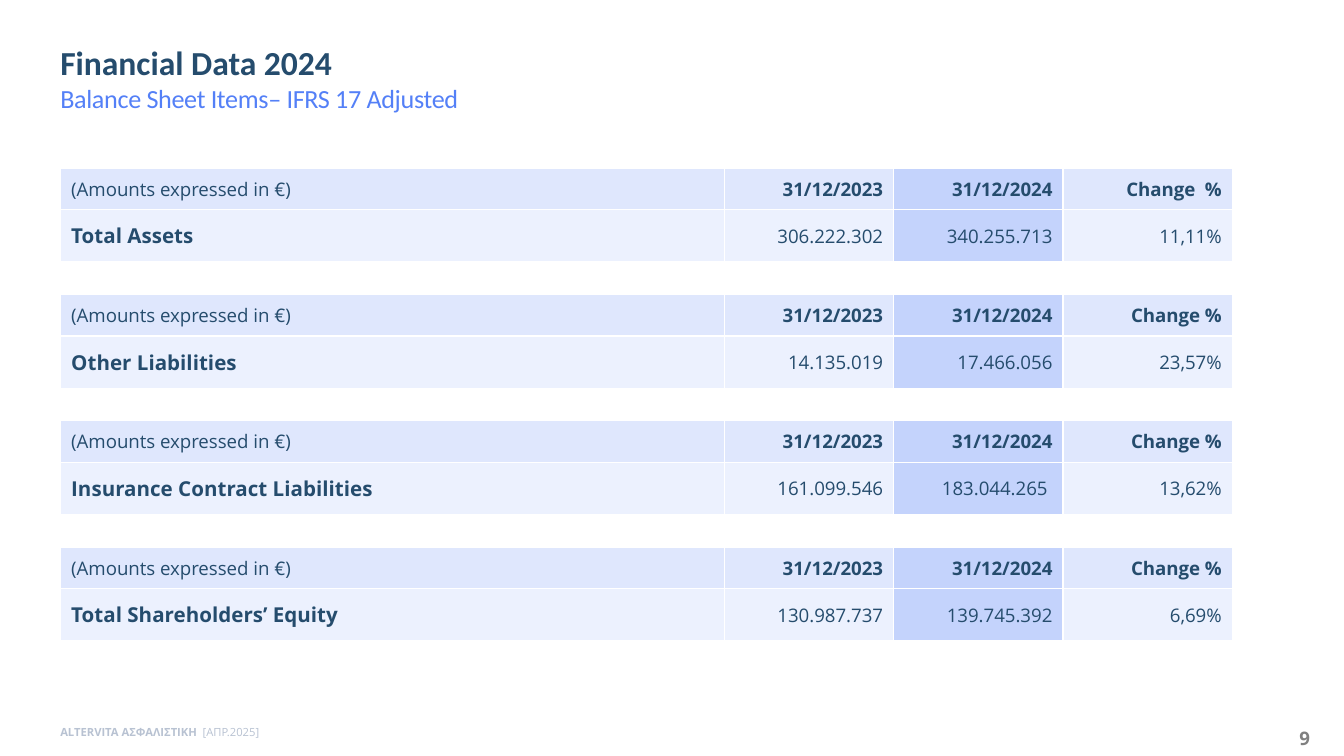
import pptx
import pptx.util
import pptx.dml.color
import pptx.enum.text
import pptx.oxml
import pptx.oxml.ns

Inches = pptx.util.Inches
Pt = pptx.util.Pt
ALIGN = pptx.enum.text.PP_ALIGN
COLORS = {
    "navy": "254C6D", "blue": "5480F7", "grey": "808080", "mist": "B8C2D2",
    "head": "DFE7FD", "body": "ECF1FE", "accent": "C4D3FC", "line": "FFFFFF",
}
COLS = [4.94, 1.26, 1.26, 1.26]
ROWS = [0.31, 0.39]
ITEMS = [
    ("Change  %", "Total Assets", "306.222.302", "340.255.713", "11,11%"),
    ("Change %", "Other Liabilities", "14.135.019", "17.466.056", "23,57%"),
    ("Change %", "Insurance Contract Liabilities", "161.099.546", "183.044.265 ", "13,62%"),
    ("Change %", "Total Shareholders’ Equity", "130.987.737", "139.745.392", "6,69%"),
]


def rgb(name):
    """Return the named colour."""
    return pptx.dml.color.RGBColor.from_string(COLORS[name])


def add_run(para, text, size, color, bold=False, font="Open Sans"):
    """Add a formatted run to a paragraph."""
    run = para.add_run()
    run.text = text
    for key, value in {"size": Pt(size), "bold": bold, "name": font}.items():
        setattr(run.font, key, value)
    run.font.color.rgb = rgb(color)
    return run


def add_text(slide, box, wrap=True, pad=0.05):
    """Add a text box and return its first paragraph."""
    frame = slide.shapes.add_textbox(*map(Inches, box)).text_frame
    form = {"word_wrap": wrap, "margin_top": Inches(pad), "margin_bottom": Inches(pad)}
    for key, value in form.items():
        setattr(frame, key, value)
    return frame.paragraphs[0]


def add_title(slide, box):
    """Place the title and its subtitle."""
    para = add_text(slide, box, pad=0.1)
    add_run(para, "Financial Data 2024", 18, "navy", True, "Calibri")
    para.add_line_break()
    run = add_run(para, "Balance Sheet Items– IFRS 17 Adjusted", 14, "blue", font="Calibri")
    run.font._element.set("spc", "-20")


def add_footer(slide, box):
    """Place the issuer line and the page number."""
    left, top, width, height = box
    para = add_text(slide, (left, top, 1.68, 0.2), wrap=False)
    add_run(para, "ALTERVITA ΑΣΦΑΛΙΣΤΙΚΗ  ", 6, "mist", True)
    add_run(para, "[ΑΠΡ.2025]", 6, "mist")
    para = add_text(slide, (left + width - 0.36, top + 0.01, 0.36, height))
    add_run(para, "9", 10, "grey", True)


def add_edges(cell, widths):
    """Draw the white borders of a cell."""
    props = cell._tc.get_or_add_tcPr()
    for side, width in widths.items():
        props.append(pptx.oxml.parse_xml(
            f'<a:ln{side} {pptx.oxml.ns.nsdecls("a")} w="{Pt(width)}"><a:solidFill>'
            f'<a:srgbClr val="{COLORS["line"]}"/></a:solidFill></a:ln{side}>'))


def fill_cell(cell, text, row, col):
    """Write and style one cell by its place in the table."""
    form = {
        "margin_left": Inches(0.08), "margin_right": Inches(0.08),
        "margin_top": 0, "margin_bottom": 0,
        "vertical_anchor": pptx.enum.text.MSO_ANCHOR.MIDDLE,
    }
    for key, value in form.items():
        setattr(cell, key, value)
    add_edges(cell, {"L": 0.75 if col else 1, "R": 0.75, "T": 0.75 if row else 1, "B": 0.75})
    cell.fill.solid()
    cell.fill.fore_color.rgb = rgb("accent" if col == 2 else ("head", "body")[row])
    para = cell.text_frame.paragraphs[0]
    para.alignment = ALIGN.RIGHT if col else ALIGN.LEFT
    label = row == 1 and col == 0
    add_run(para, text, 11 if label else 10, "navy", (row == 0) != (col == 0))


def add_item(slide, box, item):
    """Place the table of one balance sheet item."""
    change, *values = item
    head = ["(Amounts expressed in €)", "31/12/2023", "31/12/2024", change]
    table = slide.shapes.add_table(len(ROWS), len(COLS), *map(Inches, box)).table
    for col, width in zip(table.columns, COLS):
        col.width = Inches(width)
    for row, height in zip(table.rows, ROWS):
        row.height = Inches(height)
    for row, texts in enumerate([head, values]):
        for col, text in enumerate(texts):
            fill_cell(table.cell(row, col), text, row, col)


def main():
    """Build and save the slide."""
    deck = pptx.Presentation()
    deck.slide_width, deck.slide_height = Inches(10), Inches(10 * 9 / 16)
    slide = deck.slides.add_slide(deck.slide_layouts[6])
    add_title(slide, (0.35, 0.21, 6.69, 0.63))
    for index, item in enumerate(ITEMS):
        add_item(slide, (0.45, 1.25 + 0.94 * index, sum(COLS), sum(ROWS)), item)
    add_footer(slide, (0.35, 5.35, 9.58, 0.27))
    deck.save("out.pptx")


if __name__ == "__main__":
    main()
